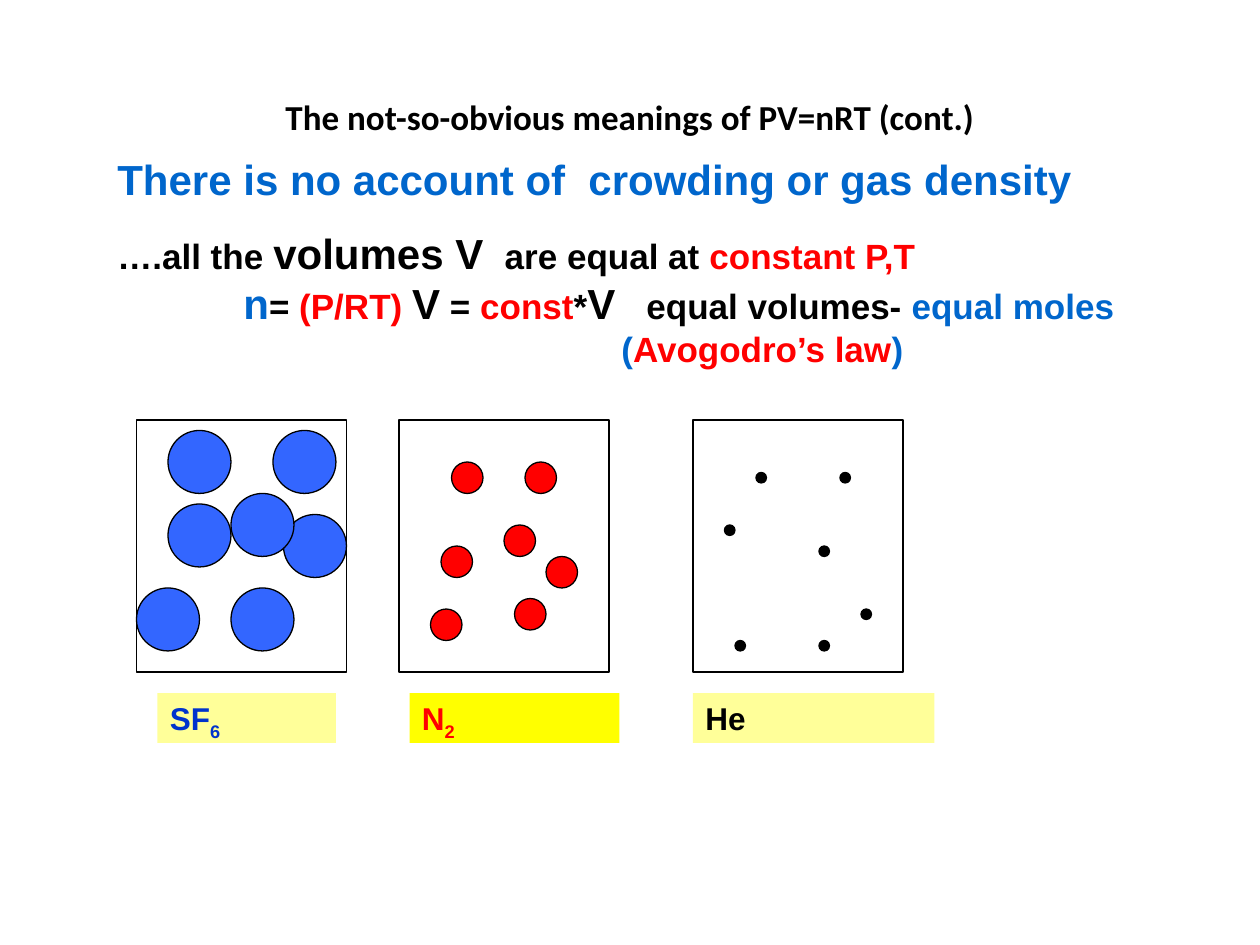
from pptx import Presentation
from pptx.dml.color import RGBColor
from pptx.enum.shapes import MSO_SHAPE
from pptx.enum.text import MSO_ANCHOR, PP_ALIGN
from pptx.util import Emu, Pt

RECT, OVAL = MSO_SHAPE.RECTANGLE, MSO_SHAPE.OVAL
TOP, MIDDLE = MSO_ANCHOR.TOP, MSO_ANCHOR.MIDDLE
LEFT, CENTER = PP_ALIGN.LEFT, PP_ALIGN.CENTER

EMU_PER_PX = 9525
BLACK, RED, BLUE = "000000", "FF0000", "0066CC"

# Gas: box left, particle size and colour, particle offsets inside the box,
# label left, label width, label fill, label colour, symbol, subscript
GASES = [
    (104, 48, "3366FF",
     [(72, 128), (112, 72), (24, 8), (104, 8), (24, 64), (72, 56), (0, 128)],
     120, 136, "FFFF99", "0033CC", "SF", "6"),
    (304, 24, RED,
     [(24, 144), (80, 80), (112, 104), (88, 136), (32, 96), (96, 32), (40, 32)],
     312, 160, "FFFF00", RED, "N", "2"),
    (528, 8, BLACK,
     [(32, 168), (96, 168), (24, 80), (112, 40), (96, 96), (128, 144), (48, 40)],
     528, 184, "FFFF99", BLACK, "He", ""),
]

# Statement lines: left indent in px, space before in pt, runs
STATEMENT = [
    (0, 0, [("There is no account of  crowding or gas density", 24, BLUE)]),
    (0, 13.5, [("….all the ", 20, BLACK), ("volumes V ", 24, BLACK),
               (" are equal at ", 20, BLACK), ("constant P,T", 20, RED)]),
    (96, 0, [("n", 24, BLUE), ("= ", 20, BLACK), ("(P/RT) ", 20, RED),
             ("V", 24, BLACK), (" = ", 20, BLACK), ("const", 20, RED),
             ("*", 20, BLACK), ("V ", 24, BLACK),
             ("  equal volumes- ", 20, BLACK), ("equal moles", 20, BLUE)]),
    (384, 0, [("(", 20, BLUE), ("Avogodro’s law", 20, RED), (")", 20, BLUE)]),
]


def px(length):
    return Emu(length * EMU_PER_PX)


def color(hex_code):
    return RGBColor.from_string(hex_code)


def add_shape(slide, kind, box, fill=None, line=None):
    shape = slide.shapes.add_shape(kind, *map(px, box))
    shape.shadow.inherit = False
    if fill:
        shape.fill.solid()
        shape.fill.fore_color.rgb = color(fill)
    else:
        shape.fill.background()
    if line:
        shape.line.color.rgb = color(line)
        shape.line.width = Pt(0.75)
    else:
        shape.line.fill.background()
    return shape


def set_up_frame(shape, anchor=TOP):
    frame = shape.text_frame
    frame.word_wrap = True
    frame.vertical_anchor = anchor
    return frame


def style_paragraph(paragraph, font_name, size=None, hex_code=None, align=LEFT):
    paragraph.alignment = align
    paragraph.font.name = font_name
    paragraph.font.bold = True
    if size:
        paragraph.font.size = Pt(size)
    if hex_code:
        paragraph.font.color.rgb = color(hex_code)


def add_title(slide, box):
    frame = set_up_frame(slide.shapes.add_textbox(*map(px, box)), MIDDLE)
    heading = frame.paragraphs[0]
    heading.text = "The not-so-obvious meanings of PV=nRT (cont.)"
    style_paragraph(heading, "Calibri", 20, BLACK, CENTER)


def add_statement(slide, box):
    frame = set_up_frame(slide.shapes.add_textbox(*map(px, box)))
    for index, (indent, space, runs) in enumerate(STATEMENT):
        sentence = frame.paragraphs[0] if index == 0 else frame.add_paragraph()
        style_paragraph(sentence, "Arial")
        sentence.space_before = Pt(space)
        if indent:
            sentence._p.get_or_add_pPr().set("marL", str(px(indent)))
        for text, size, hex_code in runs:
            words = sentence.add_run()
            words.text = text
            words.font.size = Pt(size)
            words.font.color.rgb = color(hex_code)


def add_container(slide, box, size, fill, offsets):
    left, top = box[:2]
    add_shape(slide, RECT, box, line=BLACK)
    for dx, dy in offsets:
        add_shape(slide, OVAL, (left + dx, top + dy, size, size), fill, BLACK)


def add_label(slide, box, fill, hex_code, symbol, subscript):
    formula = set_up_frame(add_shape(slide, RECT, box, fill)).paragraphs[0]
    style_paragraph(formula, "Arial", 18, hex_code)
    formula.add_run().text = symbol
    if subscript:
        count = formula.add_run()
        count.text = subscript
        count.font._element.set("baseline", "-25000")


def main():
    deck = Presentation()
    deck.slide_width, deck.slide_height = px(960), px(720)
    slide = deck.slides.add_slide(deck.slide_layouts[6])

    # Heading and statement
    add_title(slide, (48, 29, 864, 120))
    add_statement(slide, (80, 112, 816, 210))

    # Gas containers with their labels
    for (left, size, fill, offsets,
         label_left, label_width, label_fill, ink, symbol, subscript) in GASES:
        add_container(slide, (left, 320, 160, 192), size, fill, offsets)
        add_label(slide, (label_left, 528, label_width, 38),
                  label_fill, ink, symbol, subscript)

    deck.save("out.pptx")


if __name__ == "__main__":
    main()
